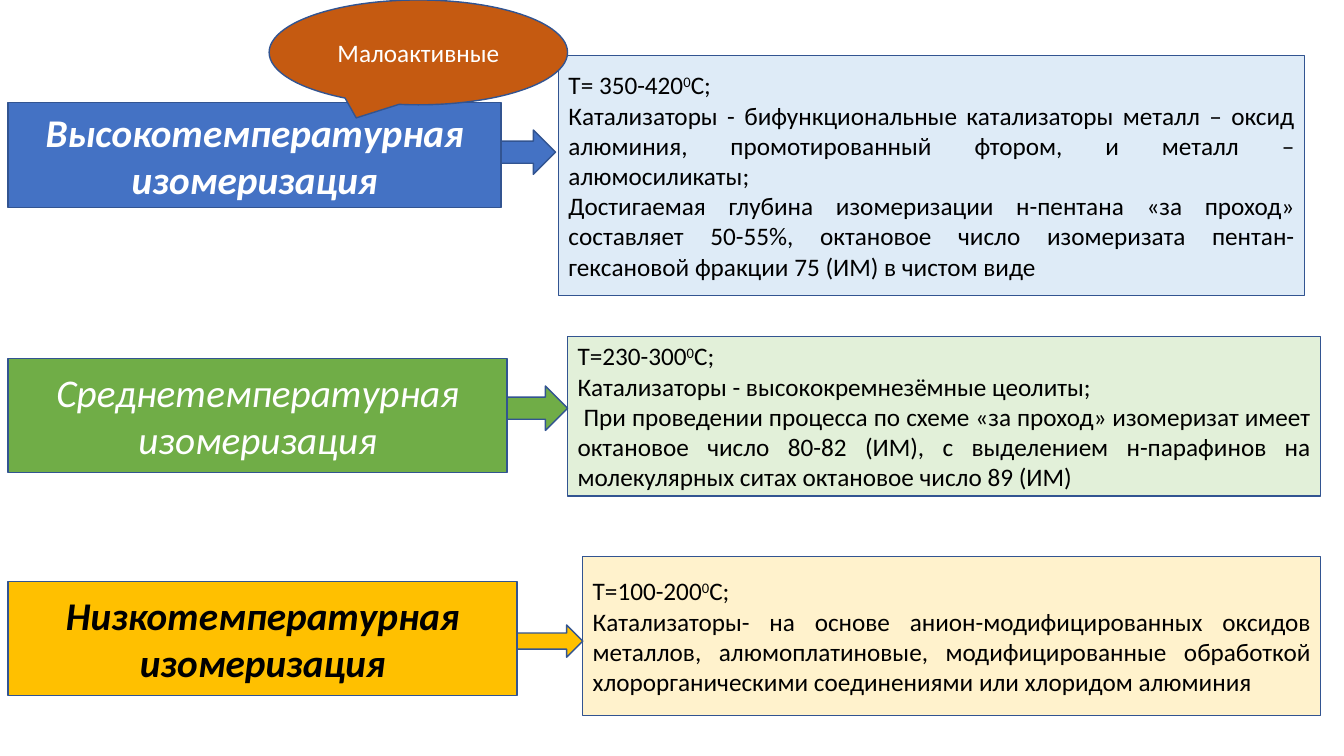
from dataclasses import dataclass

from pptx import Presentation
from pptx.dml.color import RGBColor
from pptx.enum.shapes import MSO_SHAPE
from pptx.enum.text import MSO_ANCHOR, PP_ALIGN
from pptx.util import Emu, Pt

RECTANGLE = MSO_SHAPE.RECTANGLE
RIGHT_ARROW = MSO_SHAPE.RIGHT_ARROW
OVAL_CALLOUT = MSO_SHAPE.OVAL_CALLOUT
CENTER = PP_ALIGN.CENTER
JUSTIFY = PP_ALIGN.JUSTIFY
MIDDLE = MSO_ANCHOR.MIDDLE

EMU_PER_PX = 9144  # 100 px to the inch


@dataclass(frozen=True)
class Theme:
    font: str = "Calibri"
    name_size: int = 28
    body_size: int = 18
    outline_width: int = 1
    outline: str = "325491"
    white: str = "FFFFFF"
    black: str = "000000"
    blue: str = "4472C4"
    pale_blue: str = "DEEBF7"
    green: str = "70AD47"
    pale_green: str = "E2F0D9"
    gold: str = "FFC000"
    pale_gold: str = "FFF2CC"
    rust: str = "C55A11"


THEME = Theme()


@dataclass(frozen=True)
class Box:
    left: int
    top: int
    width: int
    height: int


@dataclass(frozen=True)
class Process:
    name: str
    temperature: str
    details: tuple[str, ...]
    name_box: Box
    details_box: Box
    arrow_box: Box
    fill: str
    pale_fill: str
    name_color: str
    bold: bool


PROCESSES = (
    Process(
        "Высокотемпературная изомеризация",
        "Т= 350-420",
        (
            "Катализаторы - бифункциональные катализаторы металл – оксид "
            "алюминия, промотированный фтором, и металл – алюмосиликаты;",
            "Достигаемая глубина изомеризации н-пентана «за проход» "
            "составляет 50-55%, октановое число изомеризата "
            "пентан-гексановой фракции 75 (ИМ) в чистом виде ",
        ),
        Box(8, 102, 489, 104), Box(554, 55, 740, 238), Box(497, 129, 54, 44),
        THEME.blue, THEME.pale_blue, THEME.white, True,
    ),
    Process(
        "Среднетемпературная изомеризация",
        "Т=230-300",
        (
            "Катализаторы - высококремнезёмные цеолиты;",
            " При проведении процесса по схеме «за проход» изомеризат имеет "
            "октановое число 80-82 (ИМ), с выделением н-парафинов на "
            "молекулярных ситах октановое число 89 (ИМ) ",
        ),
        Box(8, 356, 495, 113), Box(563, 334, 747, 158), Box(503, 383, 60, 44),
        THEME.green, THEME.pale_green, THEME.white, False,
    ),
    Process(
        "Низкотемпературная изомеризация",
        "Т=100-200",
        (
            "Катализаторы- на основе анион-модифицированных оксидов "
            "металлов, алюмоплатиновые, модифицированные обработкой "
            "хлорорганическими соединениями или хлоридом алюминия",
        ),
        Box(8, 577, 505, 113), Box(578, 552, 732, 158), Box(513, 620, 65, 32),
        THEME.gold, THEME.pale_gold, THEME.black, True,
    ),
)


def px(length: int) -> Emu:
    return Emu(length * EMU_PER_PX)


def draw_shape(slide, preset: MSO_SHAPE, box: Box, fill: str):
    shape = slide.shapes.add_shape(
        preset, px(box.left), px(box.top), px(box.width), px(box.height)
    )
    shape.shadow.inherit = False
    shape.fill.solid()
    shape.fill.fore_color.rgb = RGBColor.from_string(fill)
    shape.line.color.rgb = RGBColor.from_string(THEME.outline)
    shape.line.width = Pt(THEME.outline_width)
    return shape


def format_text(frame, align: PP_ALIGN, size: int, color: str,
                bold: bool = False, italic: bool = False) -> None:
    frame.word_wrap = True
    frame.vertical_anchor = MIDDLE
    for paragraph in frame.paragraphs:
        paragraph.alignment = align
        for run in paragraph.runs:
            run.font.name = THEME.font
            run.font.size = Pt(size)
            run.font.bold = bold
            run.font.italic = italic
            run.font.color.rgb = RGBColor.from_string(color)


def draw_process(slide, process: Process) -> None:
    # Process name
    name = draw_shape(slide, RECTANGLE, process.name_box, process.fill).text_frame
    name.text = process.name
    format_text(name, CENTER, THEME.name_size, process.name_color,
                process.bold, italic=True)

    # Conditions: temperature with a raised degree sign, then details
    conditions = draw_shape(
        slide, RECTANGLE, process.details_box, process.pale_fill
    ).text_frame
    conditions.text = "\n".join((process.temperature, *process.details))
    temperature = conditions.paragraphs[0]
    degree = temperature.add_run()
    degree.text = "0"
    degree.font._element.set("baseline", "30000")
    temperature.add_run().text = "С;"
    format_text(conditions, JUSTIFY, THEME.body_size, THEME.black)

    # Arrow from name to conditions
    draw_shape(slide, RIGHT_ARROW, process.arrow_box, process.fill)


def main() -> None:
    presentation = Presentation()
    presentation.slide_width = px(1333)
    presentation.slide_height = px(750)
    slide = presentation.slides.add_slide(presentation.slide_layouts[6])

    for process in PROCESSES:
        draw_process(slide, process)

    # Remark on the high-temperature process
    remark = draw_shape(
        slide, OVAL_CALLOUT, Box(267, 0, 296, 104), THEME.rust
    ).text_frame
    remark.text = "Малоактивные"
    format_text(remark, CENTER, THEME.body_size, THEME.white)

    presentation.save("out.pptx")


if __name__ == "__main__":
    main()
